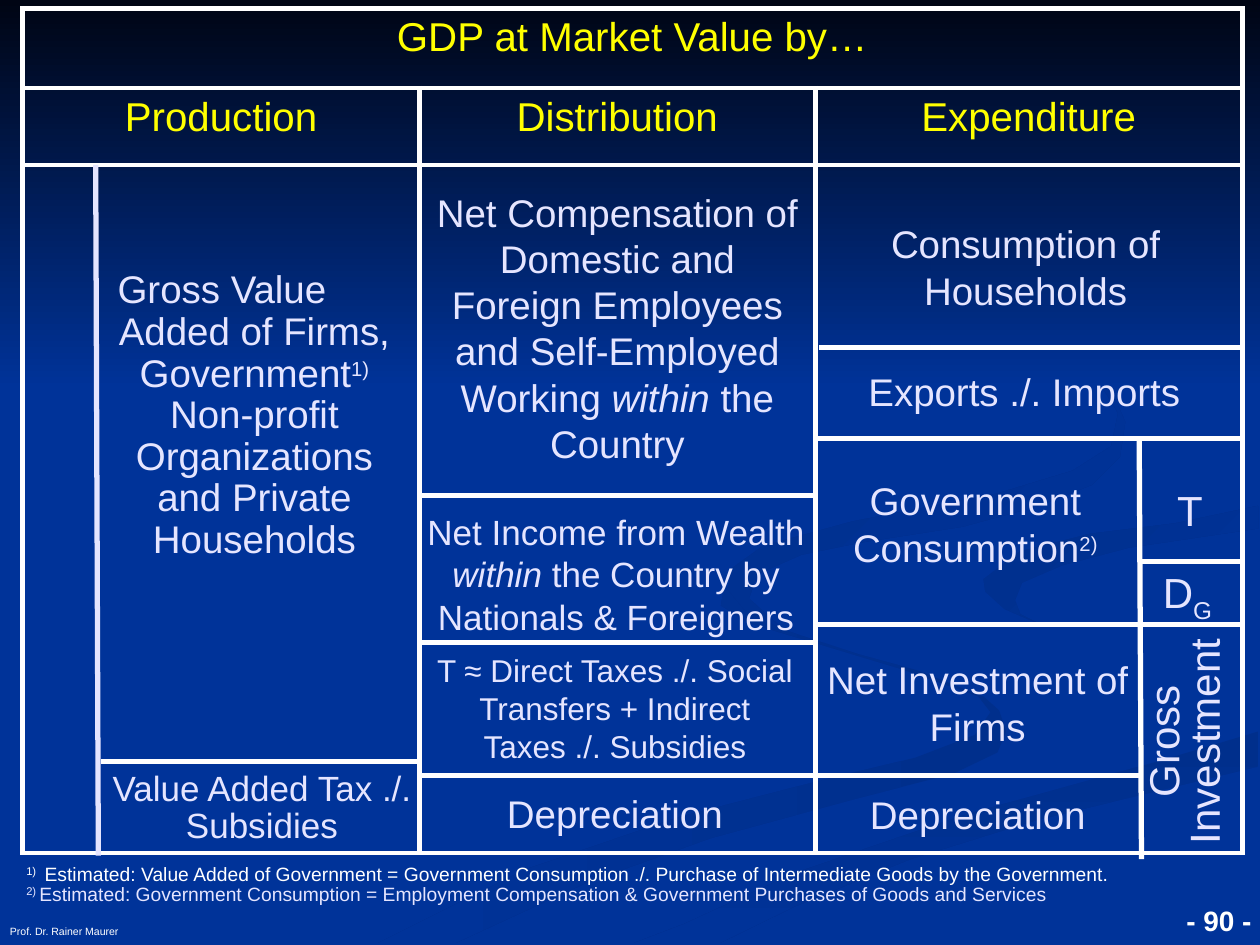
from lxml import etree
from pptx import Presentation
from pptx.dml.color import RGBColor
from pptx.enum.shapes import MSO_CONNECTOR, MSO_SHAPE
from pptx.enum.text import MSO_ANCHOR as ANCHOR, PP_ALIGN as ALIGN
from pptx.oxml.ns import qn
from pptx.util import Pt

COLORS = {"blue": "003399", "night": "000514", "swirl": "002F8C",
          "white": "FFFFFF", "pale": "E5E5FF", "yellow": "FFFF00"}
BASELINES = {"sup": "30000", "sub": "-25000"}


def rgb(name):
    return RGBColor.from_string(COLORS[name])


def add_runs(paragraph, runs, size, color):
    """Add (text, style) runs; style is plain, italic, bold, sup or sub."""
    for text, style in runs:
        run = paragraph.add_run()
        run.text = text
        run.font.name = "Arial"
        run.font.size = Pt(20 if style == "sup" and size == 22 else size)
        run.font.color.rgb = rgb(color)
        if style == "italic":
            run.font.italic = True
        elif style == "bold":
            run.font.bold = True
        elif style in BASELINES:
            run._r.get_or_add_rPr().set("baseline", BASELINES[style])


prs = Presentation()
prs.slide_width, prs.slide_height = Pt(720), Pt(540)
slide = prs.slides.add_slide(prs.slide_layouts[6])
shapes = slide.shapes
slide.background.fill.solid()
slide.background.fill.fore_color.rgb = rgb("blue")

# Background: faint swirls, then the dark sky at the top
swirls = [
    # lower ribbon
    ([(562, 398), (524, 383), (491, 374), (451, 361), (428, 349), (414, 334),
      (412, 346), (428, 356), (471, 369), (514, 382), (559, 398), (566, 407),
      (557, 420), (523, 433), (469, 446), (388, 467), (300, 497), (216, 539),
      (260, 539), (336, 504), (406, 479), (487, 457), (545, 442), (570, 430),
      (575, 418), (571, 406)], 180),
    # band to the bottom right
    ([(362, 539), (411, 539), (454, 518), (520, 491), (591, 469), (719, 438),
      (719, 418), (662, 435), (550, 466), (454, 499), (391, 528)], 270),
    # upper bow
    ([(492, 310), (550, 301), (594, 289), (624, 277), (640, 261), (643, 241),
      (634, 221), (614, 204), (583, 184), (549, 168), (594, 191), (626, 215),
      (639, 236), (635, 255), (613, 269), (570, 282), (487, 298), (436, 312),
      (418, 325), (416, 337), (425, 348), (448, 360), (428, 342), (433, 328),
      (458, 317)], 315),
    # right edge
    ([(562, 331), (563, 338), (574, 348), (595, 357), (583, 351), (580, 343),
      (584, 333), (607, 323), (645, 313), (719, 302), (719, 289), (672, 299),
      (623, 305), (583, 315)], 315),
]
backdrop = []
for points, angle in swirls:
    builder = shapes.build_freeform(*points[0], scale=Pt(1))
    builder.add_line_segments(points[1:], close=True)
    backdrop.append((builder.convert_to_shape(), "swirl", angle))
sky = shapes.add_shape(MSO_SHAPE.RECTANGLE, 0, 0, Pt(720), Pt(222))
backdrop.append((sky, "night", 270))
for part, start, angle in backdrop:
    part.shadow.inherit = False
    part.line.fill.background()
    part.fill.gradient()
    part.fill.gradient_angle = angle
    for stop, color in zip(part.fill.gradient_stops, (start, "blue")):
        stop.color.rgb = rgb(color)

# Frame with the headings
widths, heights = (226.8, 226.1, 244.1), (45.4, 43.9, 393.1)
gdp_table = shapes.add_table(3, 3, Pt(13), Pt(5), Pt(sum(widths)), Pt(sum(heights))).table
gdp_table.first_row = gdp_table.horz_banding = False
for column, width in zip(gdp_table.columns, widths):
    column.width = Pt(width)
for row, height in zip(gdp_table.rows, heights):
    row.height = Pt(height)
gdp_table.cell(0, 0).merge(gdp_table.cell(0, 2))
for cell in gdp_table.iter_cells():
    properties = cell._tc.get_or_add_tcPr()
    for side in ("lnL", "lnR", "lnT", "lnB"):
        border = etree.SubElement(properties, qn(f"a:{side}"), w=str(Pt(3)))
        solid = etree.SubElement(border, qn("a:solidFill"))
        etree.SubElement(solid, qn("a:srgbClr"), val=COLORS["white"])
    cell.fill.background()
headings = [(0, 0, "GDP at Market Value by…"), (1, 0, "Production"),
            (1, 1, "Distribution"), (1, 2, "Expenditure")]
for row, col, heading in headings:
    paragraph = gdp_table.cell(row, col).text_frame.paragraphs[0]
    paragraph.alignment = ALIGN.CENTER
    add_runs(paragraph, [(heading, "")], 23, "yellow")

# Dividers inside the columns: x1, y1, x2, y2
dividers = [
    (56.2, 489, 54.7, 94.3, "pale"), (57.6, 435, 241.2, 435, "white"),
    (240, 283, 466, 283, "white"), (239, 367, 465, 367, "white"),
    (241, 443, 467, 443, "white"), (466, 443, 652, 443, "white"),
    (468, 198.7, 708.5, 198.7, "white"), (467.3, 250.6, 708.5, 250.6, "white"),
    (467.3, 357, 708.5, 357, "white"), (651, 321, 710, 321, "white"),
    (652.3, 491, 651, 250.6, "white"),
]
for *ends, color in dividers:
    divider = shapes.add_connector(MSO_CONNECTOR.STRAIGHT, *map(Pt, ends))
    divider.line.color.rgb = rgb(color)
    divider.line.width = Pt(3)
    etree.SubElement(divider._element.spPr, qn("a:effectLst"))

# Labels: box, size, line spacing, has margins, rotation, runs
labels = [
    ((55.4, 437, 188.6, 49), 20, 0.9, True, 0, [("Value Added Tax ./. Subsidies", "")]),
    ((240.5, 104.4, 224.6, 167), 22, 1, True, 0,
     [("Net Compensation of Domestic and Foreign Employees and Self-Employed Working ", ""),
      ("within", "italic"), (" the Country", "")]),
    ((239.8, 288, 224.6, 80), 20, 1, False, 0,
     [("Net Income from Wealth ", ""), ("within", "italic"),
      (" the Country by Nationals & Foreigners", "")]),
    ((240.5, 372.2, 221.8, 59), 18, 1, False, 0,
     [("T ≈ Direct Taxes ./. Social Transfers + Indirect Taxes ./. Subsidies", "")]),
    ((252, 447.8, 198.7, 30.2), 22, 1, True, 0, [("Depreciation", "")]),
    ((465.1, 122.4, 241.9, 35.3), 22, 1, True, 0, [("Consumption of Households", "")]),
    ((464.4, 206.6, 241.9, 35.3), 22, 1, True, 0, [("Exports ./. Imports", "")]),
    ((473.8, 269.3, 167, 57.6), 22, 1, True, 0,
     [("Government Consumption", ""), ("2)", "sup")]),
    ((467.3, 375.1, 182.9, 55.4), 22, 1, False, 0, [("Net Investment of Firms", "")]),
    ((470.2, 448.6, 177.1, 30.2), 22, 1, True, 0, [("Depreciation", "")]),
    ((655.9, 273.6, 48.2, 24.5), 24, 1, True, 0, [("T", "")]),
    ((654.5, 320.4, 48.2, 24.5), 24, 1, True, 0, [("D", ""), ("G", "sub")]),
    ((614.9, 399.6, 129.6, 48.2), 24, 0.8, False, 270, [("Gross Investment", "")]),
]
for box, size, spacing, has_margins, rotation, runs in labels:
    label = shapes.add_textbox(*map(Pt, box))
    label.rotation = rotation
    frame = label.text_frame
    frame.word_wrap = True
    if not has_margins:
        frame.margin_left = frame.margin_right = frame.margin_top = frame.margin_bottom = 0
    if runs[0][0].startswith("Net Income"):
        frame.vertical_anchor = ANCHOR.MIDDLE
    paragraph = frame.paragraphs[0]
    paragraph.alignment = ALIGN.CENTER
    paragraph.line_spacing = spacing
    add_runs(paragraph, runs, size, "pale")

# Gross value added: the first line is indented, the rest is centred
value_added = shapes.add_textbox(Pt(51.1), Pt(151.2), Pt(188.6), Pt(188)).text_frame
value_added.word_wrap = True
first, rest = value_added.paragraphs[0], value_added.add_paragraph()
first.alignment, rest.alignment = ALIGN.LEFT, ALIGN.CENTER
first.line_spacing = rest.line_spacing = 0.9
first._p.get_or_add_pPr().set("marL", str(Pt(9)))
add_runs(first, [("Gross Value", "")], 22, "pale")
add_runs(rest, [("Added of Firms, Government", ""), ("1)", "sup"),
                (" Non-profit Organizations and Private Households", "")], 22, "pale")

# Footnotes, author and page number
notes = [
    ((8, 489, 703, 20), 11, "white", ANCHOR.TOP, ALIGN.LEFT,
     [("1) ", "sup"), (" Estimated: Value Added of Government = Government Consumption ./. "
                       "Purchase of Intermediate Goods by the Government.", "")]),
    ((8, 500.4, 618, 20), 11, "pale", ANCHOR.TOP, ALIGN.LEFT,
     [("2) ", "sup"), ("Estimated: Government Consumption = Employment Compensation "
                       "& Government Purchases of Goods and Services", "")]),
    ((-1.4, 501.8, 445, 37.4), 6, "white", ANCHOR.BOTTOM, ALIGN.LEFT,
     [("Prof. Dr. Rainer Maurer", "")]),
    ((554.4, 501.8, 167.8, 37.4), 16, "white", ANCHOR.BOTTOM, ALIGN.RIGHT,
     [("- 90 -", "bold")]),
]
for box, size, color, anchor, alignment, runs in notes:
    frame = shapes.add_textbox(*map(Pt, box)).text_frame
    frame.word_wrap = True
    frame.vertical_anchor = anchor
    frame.paragraphs[0].alignment = alignment
    add_runs(frame.paragraphs[0], runs, size, color)

prs.save("out.pptx")
